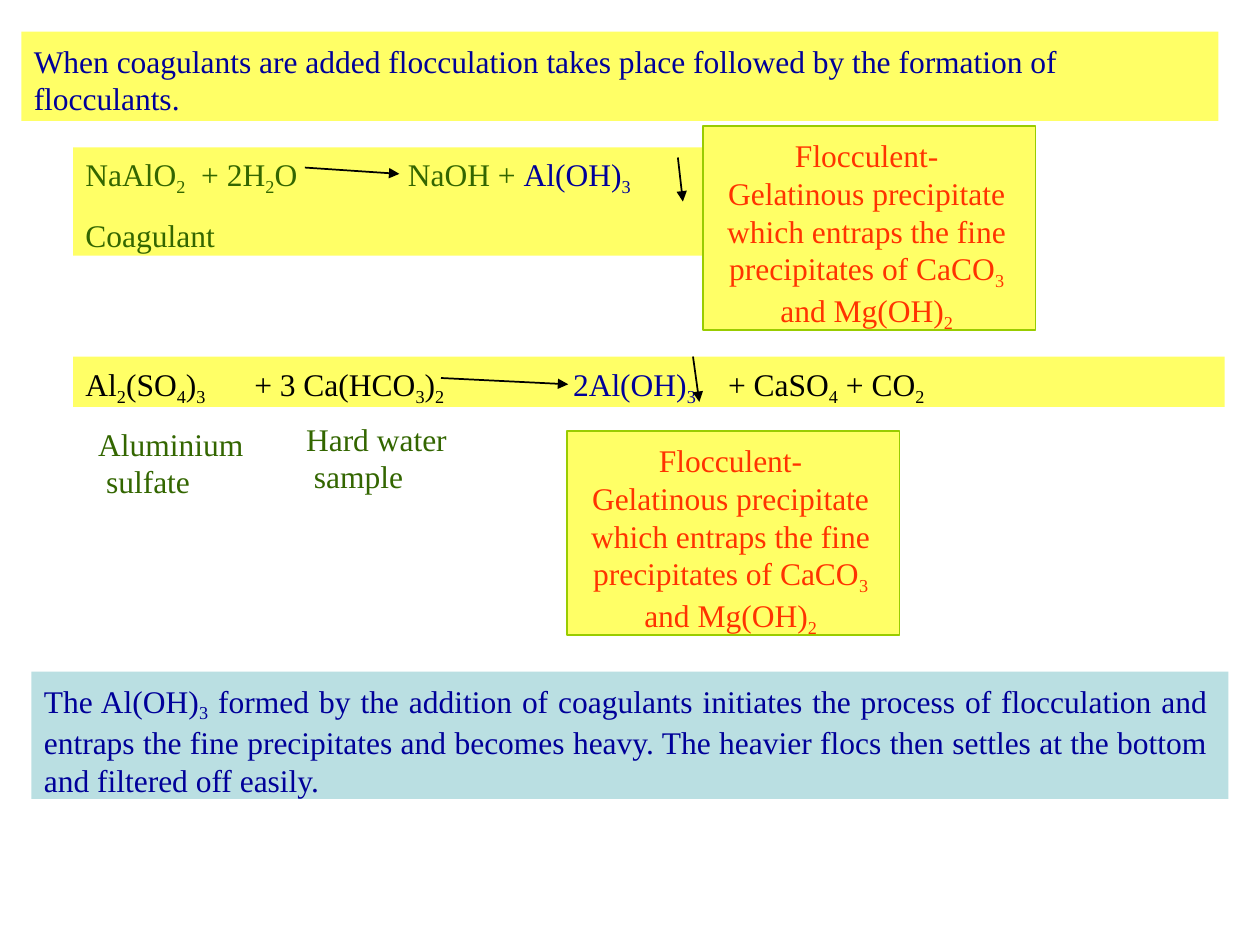
from dataclasses import dataclass

from lxml.etree import SubElement
from pptx import Presentation
from pptx.dml.color import RGBColor as RGB
from pptx.enum.shapes import MSO_CONNECTOR as CONN, MSO_SHAPE as SHAPE
from pptx.enum.text import MSO_ANCHOR as ANCHOR, PP_ALIGN as ALIGN
from pptx.oxml.ns import qn
from pptx.util import Inches, Pt


@dataclass(frozen=True)
class Theme:
    font: str = "Times New Roman"
    size: float = 18
    yellow: str = "FFFF66"
    blue: str = "BADFE2"
    border: str = "99CC00"
    navy: str = "000099"
    green: str = "336600"
    red: str = "FF3300"
    black: str = "000000"


T = Theme()


def add_run(p, text, color, subscript=False):
    r = p.add_run()
    r.text = text
    r.font.name, r.font.size = T.font, Pt(T.size)
    r.font.color.rgb = RGB.from_string(color)
    if subscript:
        r.font._element.set("baseline", "-21000")


def add_formula(p, text, color):
    """Add text in which an underscore lowers the next character."""
    first, *rest = text.split("_")
    if first:
        add_run(p, first, color)
    for part in rest:
        add_run(p, part[0], color, subscript=True)
        if part[1:]:
            add_run(p, part[1:], color)


def set_tabs(p, stops):
    tabs = SubElement(p._p.get_or_add_pPr(), qn("a:tabLst"))
    for stop in stops:
        SubElement(tabs, qn("a:tab"), pos=str(Inches(stop)), algn="l")


def add_panel(s, box, paragraphs, fill=None, line=None, align=ALIGN.LEFT,
              inset=(0.1, 0.08, 0.1), gap=0, tabs=()):
    """Place a text panel; each paragraph is a list of (text, colour) parts."""
    sp = s.shapes.add_shape(SHAPE.RECTANGLE, *map(Inches, box))
    sp.shadow.inherit = False
    if fill:
        sp.fill.solid()
        sp.fill.fore_color.rgb = RGB.from_string(fill)
    else:
        sp.fill.background()
    if line:
        sp.line.color.rgb = RGB.from_string(line)
        sp.line.width = Pt(0.72)
    else:
        sp.line.fill.background()
    tf = sp.text_frame
    tf.word_wrap, tf.vertical_anchor = True, ANCHOR.TOP
    tf.margin_left, tf.margin_top, tf.margin_right = map(Inches, inset)
    tf.margin_bottom = 0
    for i, parts in enumerate(paragraphs):
        p = tf.add_paragraph() if i else tf.paragraphs[0]
        p.alignment = align
        if i:
            p.space_before = Pt(gap)
        if tabs:
            set_tabs(p, tabs)
        for text, color in parts:
            add_formula(p, text, color)


def add_arrow(s, x1, y1, x2, y2):
    c = s.shapes.add_connector(CONN.STRAIGHT, *map(Inches, (x1, y1, x2, y2)))
    c.line.color.rgb = RGB.from_string(T.black)
    c.line.width = Pt(1)
    SubElement(c.line._get_or_add_ln(), qn("a:tailEnd"), type="triangle")
    SubElement(c._element.spPr, qn("a:effectLst"))


def add_floc_note(s, left, top):
    lines = ("Flocculent-", "Gelatinous precipitate", "which entraps the fine",
             "precipitates of CaCO_3", "and Mg(OH)_2")
    add_panel(s, (left, top, 2.64, 1.62), [[(t, T.red)] for t in lines],
              fill=T.yellow, line=T.border, align=ALIGN.CENTER,
              inset=(0.1, 0.08, 0.14))


def add_aluminate_reaction(s, left, top):
    add_panel(s, (left, top, 5, 0.86),
              [[("NaAlO_2  + 2H_2O\tNaOH + ", T.green), ("Al(OH)_3", T.navy)],
               [("Coagulant", T.green)]],
              fill=T.yellow, inset=(0.1, 0.06, 0), gap=10.8, tabs=[2.56])
    add_arrow(s, left + 1.84, top + 0.16, left + 2.59, top + 0.21)
    add_arrow(s, left + 4.8, top + 0.08, left + 4.84, top + 0.43)
    add_floc_note(s, left + 5, top - 0.17)


def add_sulfate_reaction(s, left, top):
    add_panel(s, (left, top, 9.14, 0.4),
              [[("Al_2(SO_4)_3\t+ 3 Ca(HCO_3)_2\t", T.black),
                ("2Al(OH)_3\t", T.navy), ("+ CaSO_4 + CO_2", T.black)]],
              fill=T.yellow, inset=(0.1, 0.07, 0), tabs=[1.34, 3.87, 5.1])
    add_arrow(s, left + 2.92, top + 0.17, left + 3.93, top + 0.22)
    # Names of the reactants
    for x, y, lines in ((0.2, 0.54, ("Aluminium", " sulfate")),
                        (1.85, 0.5, ("Hard water", " sample"))):
        add_panel(s, (left + x, top + y, 1.3, 0.63),
                  [[(t, T.green)] for t in lines], inset=(0, 0, 0))
    add_floc_note(s, left + 3.92, top + 0.59)
    add_arrow(s, left + 4.92, top, left + 4.97, top + 0.36)


def main():
    prs = Presentation()
    prs.slide_width, prs.slide_height = Inches(10), Inches(7.5)
    s = prs.slides.add_slide(prs.slide_layouts[6])

    # Introduction
    add_panel(s, (0.17, 0.25, 9.5, 0.71),
              [[("When coagulants are added flocculation takes place followed "
                 "by the formation of", T.navy)],
               [("flocculants.", T.navy)]], fill=T.yellow)

    # Reactions
    add_aluminate_reaction(s, 0.58, 1.17)
    add_sulfate_reaction(s, 0.58, 2.83)

    # Conclusion
    add_panel(s, (0.25, 5.33, 9.5, 1.01),
              [[("The Al(OH)_3 formed by the addition of coagulants initiates "
                 "the process of flocculation and entraps the fine "
                 "precipitates and becomes heavy. The heavier flocs then "
                 "settles at the bottom and filtered off easily.", T.navy)]],
              fill=T.blue, align=ALIGN.JUSTIFY, inset=(0.1, 0.08, 0.16))

    prs.save("out.pptx")


if __name__ == "__main__":
    main()
